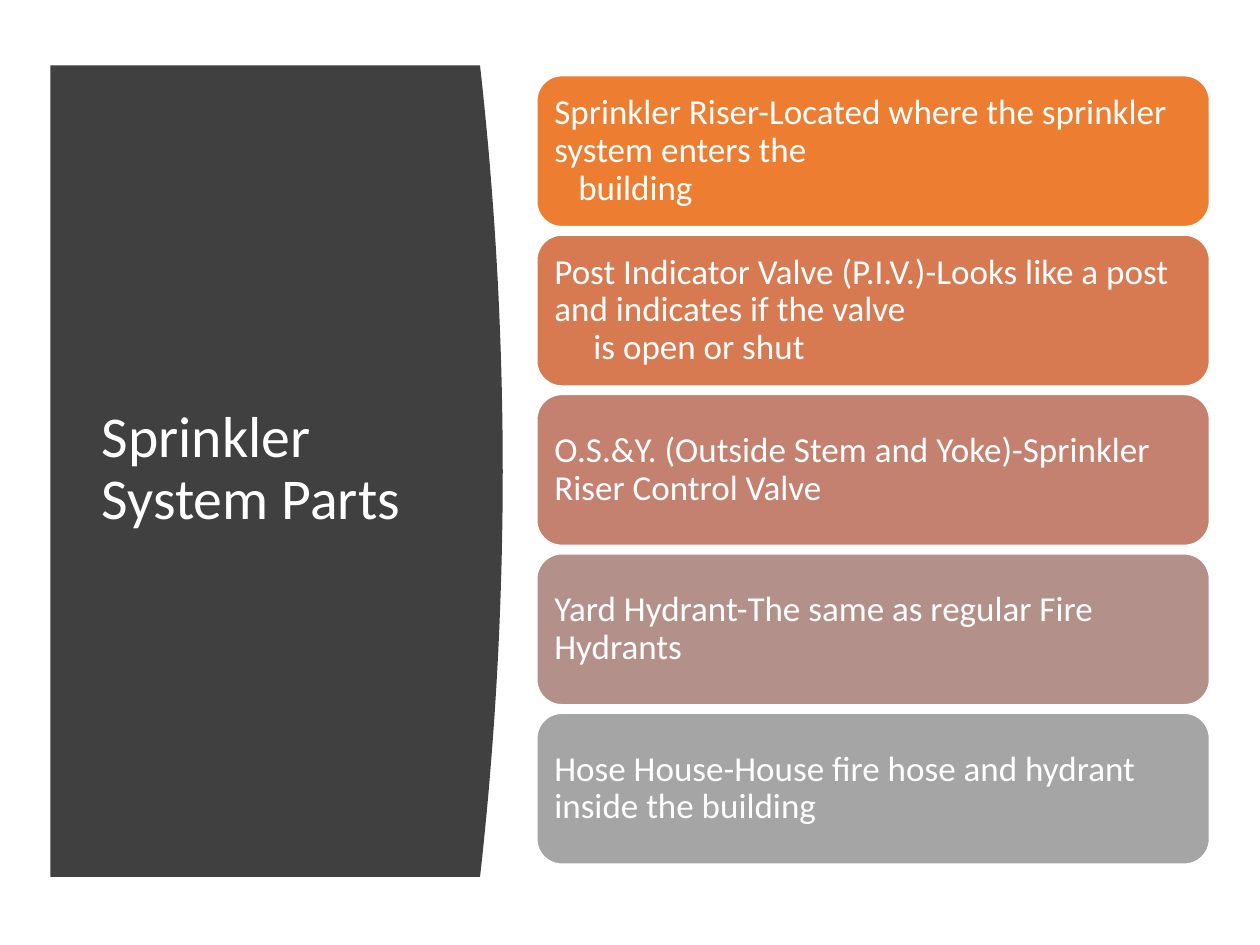
"""Build the sprinkler system parts slide."""
from pptx import Presentation
from pptx.dml.color import RGBColor
from pptx.enum.shapes import MSO_SHAPE
from pptx.enum.text import MSO_ANCHOR, PP_ALIGN
from pptx.util import Inches, Pt

TITLE = "Sprinkler System Parts"
PARTS = [
    ("ED7D31", [("Sprinkler Riser-Located where the sprinkler system enters the", 0), ("building", 0.19)]),
    ("D87A51", [("Post Indicator Valve (P.I.V.)-Looks like a post and indicates if the valve", 0),
                ("is open or shut", 0.31)]),
    ("C48170", [("O.S.&Y. (Outside Stem and Yoke)-Sprinkler Riser Control Valve", 0)]),
    ("B4908B", [("Yard Hydrant-The same as regular Fire Hydrants", 0)]),
    ("A5A5A5", [("Hose House-House fire hose and hydrant inside the building", 0)]),
]
PANEL_LEFT, PANEL_TOP, PANEL_BOTTOM = 0.4, 0.52, 6.96
PANEL_EDGE, PANEL_BULGE, CURVE_STEPS = 3.81, 0.18, 40
CARD_LEFT, CARD_TOP, CARD_WIDTH, CARD_HEIGHT, CARD_PITCH = 4.26, 0.6, 5.34, 1.2, 1.265
CARD_RADIUS, CARD_INSET = 0.2, 0.14


def color(value):
    return RGBColor.from_string(value)


def paint(shape, fill, line=None):
    shape.shadow.inherit = False
    shape.fill.solid()
    shape.fill.fore_color.rgb = color(fill)
    if line:
        shape.line.color.rgb = color(line)
        shape.line.width = Pt(1)
    else:
        shape.line.fill.background()


def write(shape, lines, size, inset=None):
    frame = shape.text_frame
    frame.text = "\n".join(text for text, indent in lines)
    frame.word_wrap = True
    frame.vertical_anchor = MSO_ANCHOR.MIDDLE
    if inset is not None:
        frame.margin_left = frame.margin_right = Inches(inset)
        frame.margin_top = frame.margin_bottom = Inches(inset)
    for paragraph, (text, indent) in zip(frame.paragraphs, lines):
        paragraph.alignment = PP_ALIGN.LEFT
        paragraph.line_spacing = 0.9
        if indent:
            properties = paragraph._p.get_or_add_pPr()
            properties.set("marL", str(Inches(indent)))
            properties.set("indent", "0")
        font = paragraph.runs[0].font
        font.name, font.size, font.color.rgb = "Calibri", Pt(size), color("FFFFFF")


def add_panel(slide):
    height = PANEL_BOTTOM - PANEL_TOP
    curve = []
    for step in range(CURVE_STEPS + 1):
        share = step / CURVE_STEPS
        bulge = PANEL_BULGE * 4 * share * (1 - share)
        curve.append((Inches(PANEL_EDGE + bulge), Inches(PANEL_TOP + height * share)))
    builder = slide.shapes.build_freeform(Inches(PANEL_LEFT), Inches(PANEL_TOP))
    builder.add_line_segments(curve + [(Inches(PANEL_LEFT), Inches(PANEL_BOTTOM))], close=True)
    paint(builder.convert_to_shape(), "404040")


def add_card(slide, index, fill, lines):
    top = CARD_TOP + index * CARD_PITCH
    card = slide.shapes.add_shape(MSO_SHAPE.ROUNDED_RECTANGLE, Inches(CARD_LEFT), Inches(top),
                                  Inches(CARD_WIDTH), Inches(CARD_HEIGHT))
    card.adjustments[0] = CARD_RADIUS / CARD_HEIGHT
    paint(card, fill, "FFFFFF")
    write(card, lines, 20, CARD_INSET)
    text_inset = Inches(CARD_INSET) - Inches(CARD_RADIUS * 0.29)
    card.text_frame.margin_left = card.text_frame.margin_right = text_inset
    card.text_frame.margin_top = card.text_frame.margin_bottom = text_inset


def main():
    presentation = Presentation()
    presentation.slide_width, presentation.slide_height = Inches(10), Inches(7.5)
    slide = presentation.slides.add_slide(presentation.slide_layouts[6])
    add_panel(slide)
    title = slide.shapes.add_textbox(Inches(0.71), Inches(1.11), Inches(2.8), Inches(5.24))
    write(title, [(TITLE, 0)], 33)
    for index, (fill, lines) in enumerate(PARTS):
        add_card(slide, index, fill, lines)
    presentation.save("out.pptx")


if __name__ == "__main__":
    main()
